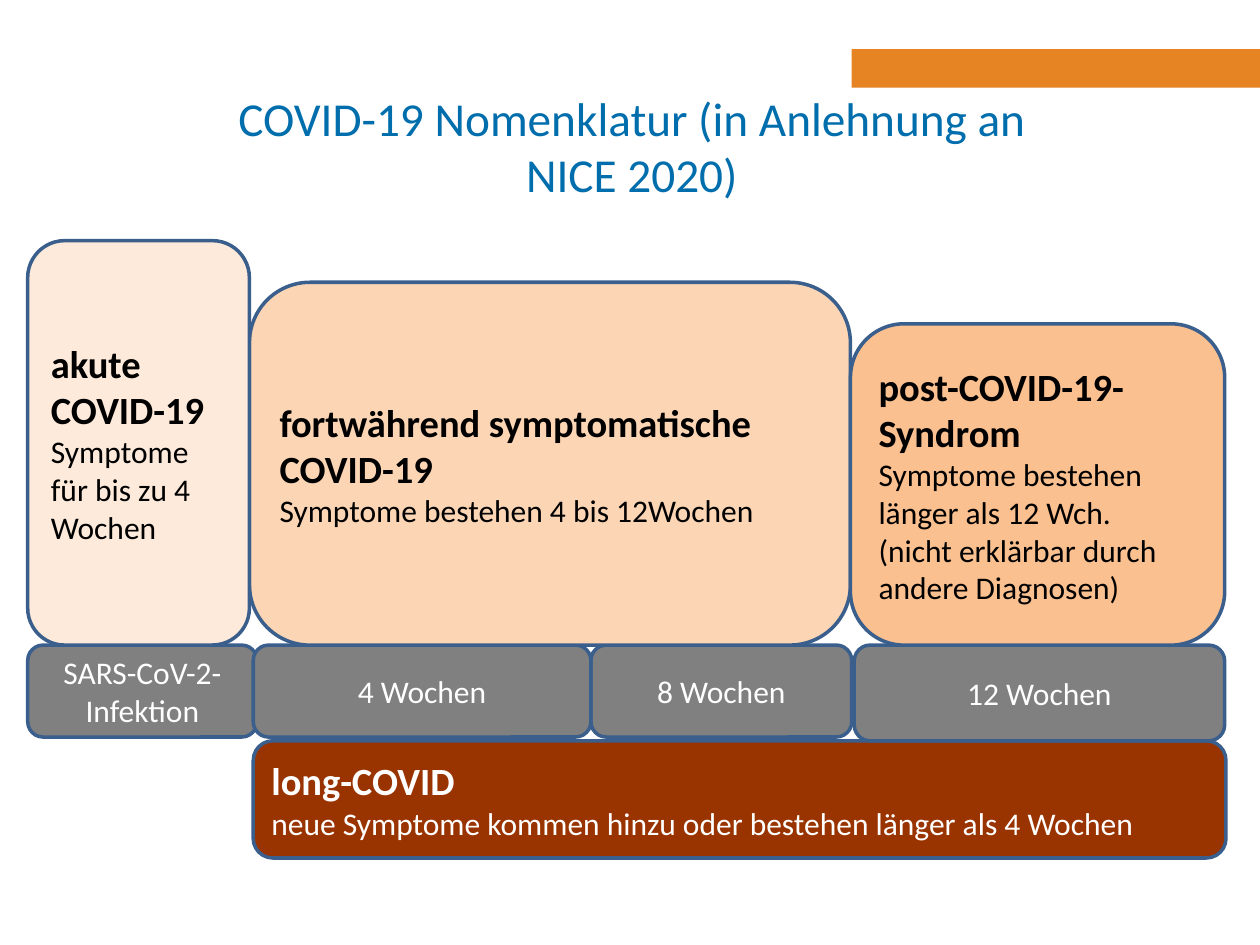
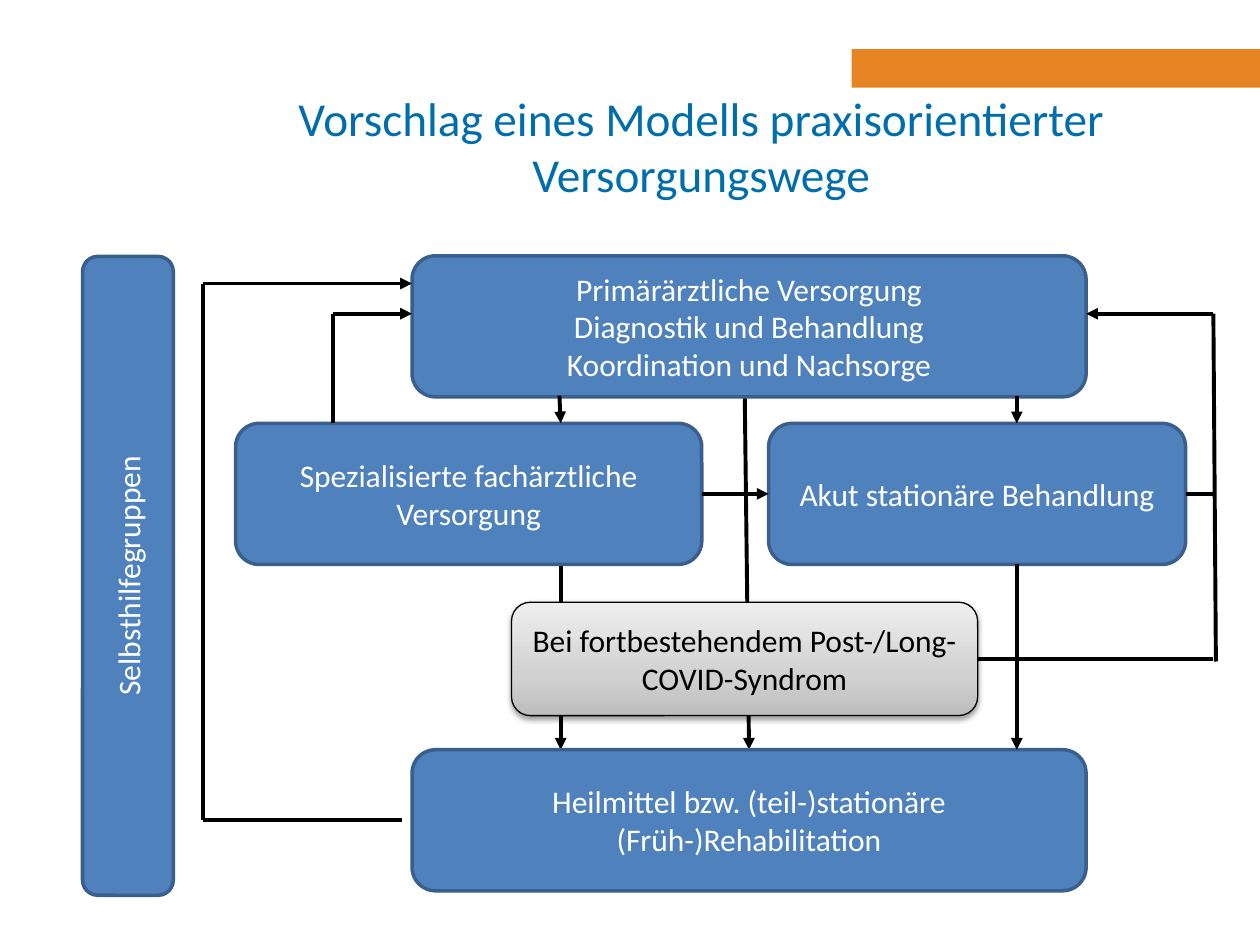
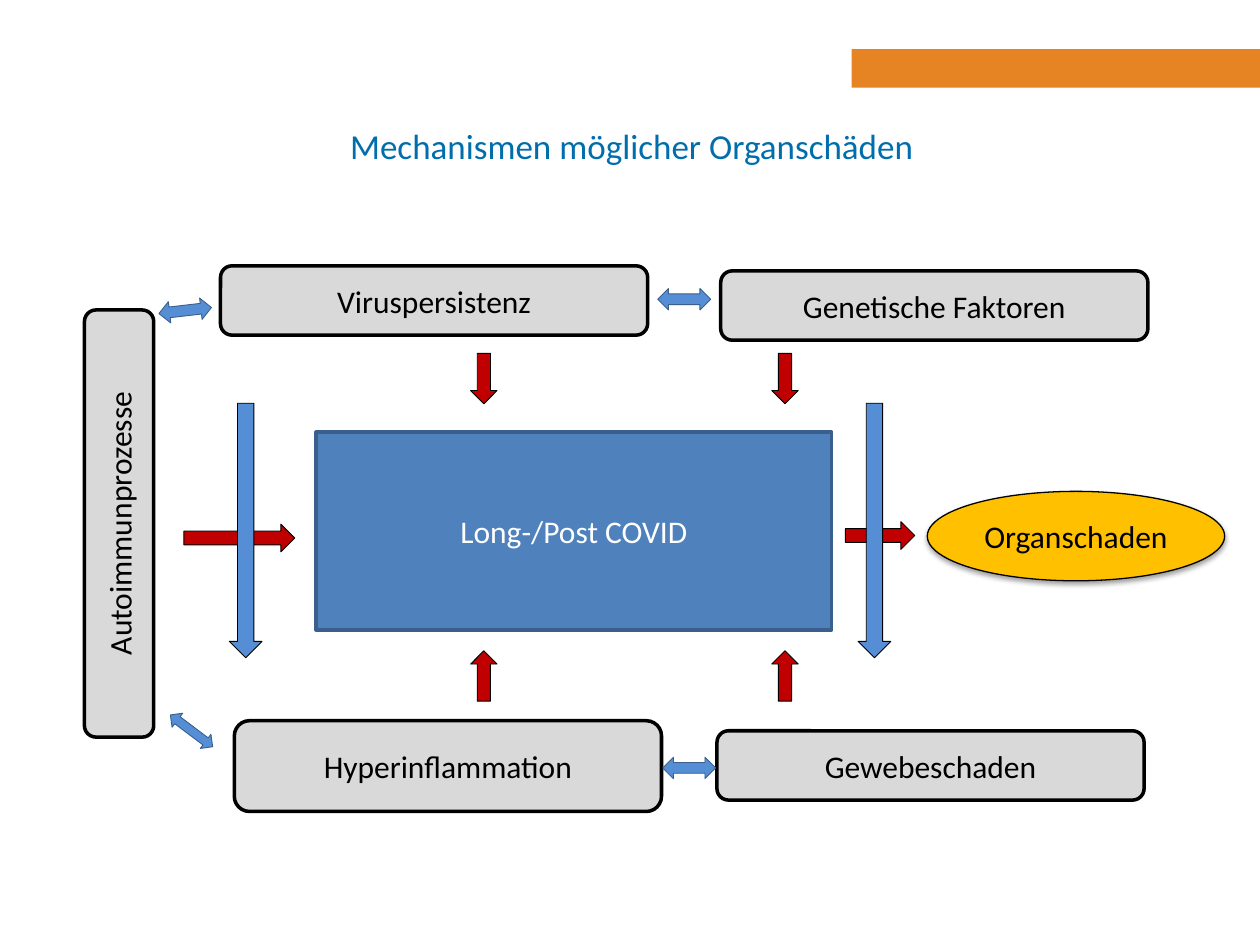
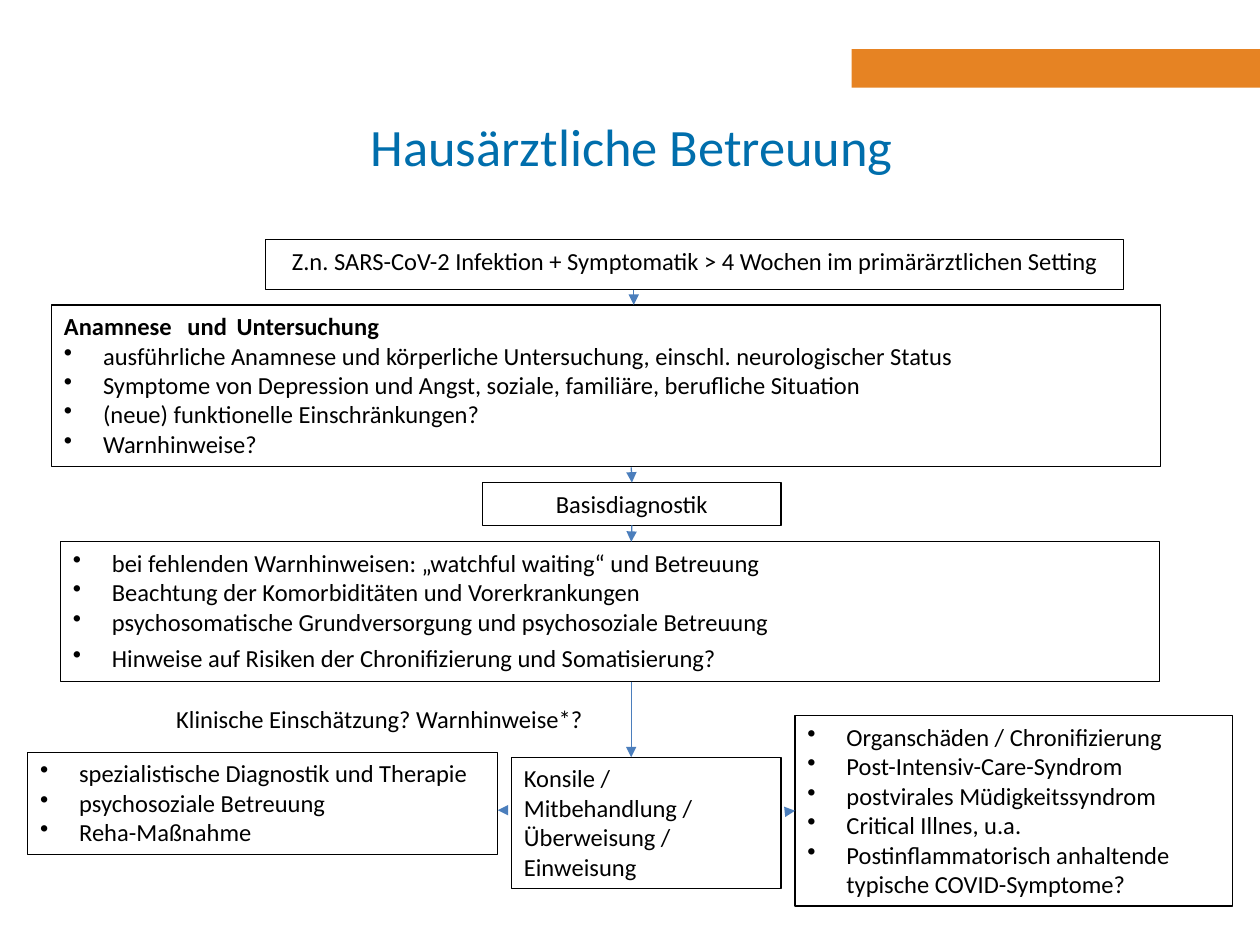
from dataclasses import dataclass, replace
from itertools import product
from typing import NamedTuple

from lxml import etree
from pptx import Presentation
from pptx.dml.color import RGBColor
from pptx.enum.shapes import MSO_CONNECTOR, MSO_SHAPE
from pptx.enum.text import MSO_ANCHOR, PP_ALIGN
from pptx.oxml.ns import qn
from pptx.util import Emu, Inches, Pt

LEFT, CENTER = PP_ALIGN.LEFT, PP_ALIGN.CENTER
TOP, MIDDLE = MSO_ANCHOR.TOP, MSO_ANCHOR.MIDDLE
RECTANGLE, ROUNDED, OVAL = MSO_SHAPE.RECTANGLE, MSO_SHAPE.ROUNDED_RECTANGLE, MSO_SHAPE.OVAL
ARROW, DOUBLE_ARROW = MSO_SHAPE.RIGHT_ARROW, MSO_SHAPE.LEFT_RIGHT_ARROW
STRAIGHT = MSO_CONNECTOR.STRAIGHT

SLIDE_WIDTH, SLIDE_HEIGHT = Inches(10), Inches(7.5)
COLUMNS = 100
CELL = SLIDE_WIDTH / COLUMNS
JOIN_TOLERANCE = CELL * 0.2

FONT = "Calibri"
ORANGE, TITLE_BLUE = "E68323", "006EAC"
BLUE, LIGHT_BLUE, EDGE, FLOW = "4F81BD", "558ED5", "3A5F8C", "4B7EBC"
BLACK, WHITE, RED = "000000", "FFFFFF", "C00000"
SILVER = ((0, "BDBDBD"), (35, "D1D1D1"), (100, "EEEEEE"))


class Frame(NamedTuple):
    column: float
    row: float
    width: float
    height: float


class Para(NamedTuple):
    text: str
    size: float | None = None
    bold: bool = False
    bullet: bool = False
    before: float = 0
    tabs: tuple[float, ...] = ()


@dataclass(frozen=True)
class Style:
    fill: str | tuple | None = None
    line: str | None = EDGE
    weight: float = 2
    ink: str = WHITE
    size: float = 18
    align: PP_ALIGN = CENTER
    anchor: MSO_ANCHOR = MIDDLE
    preset: MSO_SHAPE = ROUNDED
    shadow: bool = False


class Box(NamedTuple):
    frame: Frame
    paras: tuple[Para, ...]
    style: Style
    turn: float = 0


class Line(NamedTuple):
    start: tuple[float, float]
    end: tuple[float, float]
    arrow: bool = True


BAR = Style(ORANGE, None, preset=RECTANGLE)
TITLE = Style(None, None, ink=TITLE_BLUE, preset=RECTANGLE)
CARE = Style(BLUE)
PERIOD = Style("808080")
PHASE = Style("FCD5B5", ink=BLACK, align=LEFT)
LONG_TERM = Style("993300", align=LEFT)
RAISED = Style(SILVER, BLACK, 0.75, BLACK, shadow=True)
FACTOR = Style("D9D9D9", BLACK, ink=BLACK)
RED_ARROW = Style(RED, BLACK, 0.5, preset=ARROW)
BLUE_ARROW = replace(RED_ARROW, fill=LIGHT_BLUE)
EXCHANGE = Style(LIGHT_BLUE, EDGE, 0.5, preset=DOUBLE_ARROW)
STEP = Style(None, BLACK, 0.75, BLACK, 14, LEFT, TOP, RECTANGLE)
CENTERED_STEP = replace(STEP, align=CENTER)
NOTE = replace(STEP, line=None)


def grid(cells: float) -> Emu:
    return Emu(round(cells * CELL))


def color(value: str) -> RGBColor:
    return RGBColor.from_string(value)


def apply(target, values: dict) -> None:
    for name, value in values.items():
        setattr(target, name, value)


def child(parent, tag: str, **attributes):
    values = {name: str(value) for name, value in attributes.items()}
    return etree.SubElement(parent, qn(tag), values)


def texts(*lines: str) -> tuple[Para, ...]:
    return tuple(Para(line) for line in lines)


def bullets(*lines: str) -> tuple[Para, ...]:
    return tuple(Para(line, bullet=True) for line in lines)


def headed(headings: tuple[str, ...], *lines: str) -> tuple[Para, ...]:
    return tuple(Para(heading, 22, True) for heading in headings) + texts(*lines)


def fill_shape(shape, fill: str | tuple | None) -> None:
    if fill is None:
        shape.fill.background()
    elif isinstance(fill, str):
        shape.fill.solid()
        shape.fill.fore_color.rgb = color(fill)
    else:
        shape.fill.gradient()
        shape.fill.gradient_angle = 90
        stops = next(shape._element.spPr.iter(qn("a:gsLst")))
        for stop in list(stops):
            stops.remove(stop)
        for share, shade in fill:
            child(child(stops, "a:gs", pos=share * 1000), "a:srgbClr", val=shade)


def draw_line_format(line, shade: str, weight: float) -> None:
    line.color.rgb = color(shade)
    line.width = Pt(weight)


def add_shadow(shape) -> None:
    effects = shape._element.spPr.find(qn("a:effectLst"))
    outer = child(effects, "a:outerShdw", blurRad=Pt(3.1), dist=Pt(1.6), dir=90 * 60000, rotWithShape=0)
    child(child(outer, "a:srgbClr", val=BLACK), "a:alpha", val=38000)


def write_para(para_object, para: Para, style: Style) -> None:
    para_object.alignment = style.align
    if para.before:
        para_object.space_before = Pt(para.before)
    properties = para_object._p.get_or_add_pPr()
    if para.bullet:
        properties.set("marL", str(grid(3.1)))
        properties.set("indent", str(grid(-3.1)))
        child(properties, "a:buChar", char="•")
    if para.tabs:
        tab_list = child(properties, "a:tabLst")
        for stop in para.tabs:
            child(tab_list, "a:tab", pos=grid(stop), algn="l")
    span = para_object.add_run()
    span.text = para.text
    apply(span.font, {"name": FONT, "size": Pt(para.size or style.size), "bold": para.bold})
    span.font.color.rgb = color(style.ink)


def draw_box(page, box: Box):
    style = box.style
    shape = page.shapes.add_shape(style.preset, *map(grid, box.frame))
    shape.rotation = box.turn
    fill_shape(shape, style.fill)
    if style.line:
        draw_line_format(shape.line, style.line, style.weight)
    else:
        shape.line.fill.background()
    shape.shadow.inherit = False
    if style.shadow:
        add_shadow(shape)
    frame = shape.text_frame
    apply(frame, {"word_wrap": True, "vertical_anchor": style.anchor})
    for index, para in enumerate(box.paras):
        write_para(frame.add_paragraph() if index else frame.paragraphs[0], para, style)
    return shape


def draw_boxes(page, boxes: list[Box]) -> list:
    return [draw_box(page, box) for box in boxes]


def draw_lines(page, lines: list[Line], shade: str, weight: float) -> list:
    connectors = []
    for line in lines:
        connector = page.shapes.add_connector(STRAIGHT, *map(grid, line.start + line.end))
        draw_line_format(connector.line, shade, weight)
        if line.arrow:
            child(connector.line._get_or_add_ln(), "a:tailEnd", type="triangle")
        child(connector._element.spPr, "a:effectLst")
        connectors.append(connector)
    return connectors


def side_middles(shape) -> list[tuple[float, float]]:
    middle, center = shape.left + shape.width / 2, shape.top + shape.height / 2
    right, bottom = shape.left + shape.width, shape.top + shape.height
    return [(middle, shape.top), (shape.left, center), (middle, bottom), (right, center)]


def join_lines(connectors: list, shapes: list) -> None:
    upright = [shape for shape in shapes if not shape.rotation]
    for connector, shape in product(connectors, upright):
        for side, (x, y) in enumerate(side_middles(shape)):
            ends = (
                (connector.begin_x, connector.begin_y, connector.begin_connect),
                (connector.end_x, connector.end_y, connector.end_connect),
            )
            for end_x, end_y, connect in ends:
                if max(abs(end_x - x), abs(end_y - y)) <= JOIN_TOLERANCE:
                    connect(shape, side)


def add_page(deck, title: str, size: float, title_width: float = 70.7):
    page = deck.slides.add_slide(deck.slide_layouts[6])
    draw_box(page, Box(Frame(67.6, 3.9, 32.4, 3.05), (), BAR))
    draw_box(page, Box(Frame(14.8, 6.9, title_width, 9.3), texts(title), replace(TITLE, size=size)))
    return page


def add_nomenclature(deck) -> None:
    page = add_page(deck, "COVID-19 Nomenklatur (in Anlehnung an NICE 2020)", 27)
    base = 51.2
    long_covid = headed(("long-COVID",), "neue Symptome kommen hinzu oder bestehen länger als 4 Wochen")
    periods = (
        (2.2, 18.2, 7.3, "SARS-CoV-2-Infektion"),
        (46.9, 20.7, 7.3, "8 Wochen"),
        (67.8, 29.4, 7.6, "12 Wochen"),
        (20.1, 26.8, 7.3, "4 Wochen"),
    )
    phases = (
        (19.8, 22.4, 47.7, "FCD5B5",
         headed(("fortwährend symptomatische COVID-19",), "Symptome bestehen 4 bis 12Wochen")),
        (2.2, 19.1, 17.6, "FDEADA", headed(("akute", "COVID-19"), "Symptome für bis zu 4 Wochen")),
        (67.5, 25.7, 29.7, "FAC090",
         headed(("post-COVID-19-Syndrom",), "Symptome bestehen länger als 12 Wch.",
                "(nicht erklärbar durch andere Diagnosen)")),
    )
    boxes = [Box(Frame(20.1, 58.8, 77.2, 9.3), long_covid, LONG_TERM)]
    boxes += [Box(Frame(column, base, width, height), texts(label), PERIOD)
              for column, width, height, label in periods]
    boxes += [Box(Frame(column, row, width, base - row), paras, replace(PHASE, fill=fill))
              for column, row, width, fill, paras in phases]
    draw_boxes(page, boxes)


def add_care_paths(deck) -> None:
    page = add_page(deck, "Vorschlag eines Modells praxisorientierter Versorgungswege", 27, 81.7)
    height = 11.2
    primary, special, rehab = 20.3, 33.6, 59.5
    special_end = special + height
    special_middle = special + height / 2
    behind = draw_lines(page, [
        Line((44.5, special_end), (44.5, rehab)),
        Line((59.1, 30.7), (59.4, rehab)),
    ], BLACK, 2.25)
    shapes = draw_boxes(page, [
        Box(Frame(32.7, primary, 53.5, height),
            texts("Primärärztliche Versorgung", "Diagnostik und Behandlung", "Koordination und Nachsorge"), CARE),
        Box(Frame(18.7, special, 37, height), texts("Spezialisierte fachärztliche Versorgung"), CARE),
        Box(Frame(61, special, 33.1, height), texts("Akut stationäre Behandlung"), CARE),
        Box(Frame(40.6, 47.8, 37, 9), texts("Bei fortbestehendem Post-/Long-COVID-Syndrom"), RAISED),
        Box(Frame(32.7, rehab, 53.5, height),
            texts("Heilmittel bzw. (teil-)stationäre", "(Früh-)Rehabilitation"), CARE),
        Box(Frame(-15.2, 42.1, 50.7, 7.2), texts("Selbsthilfegruppen"), CARE, 270),
    ])
    front = draw_lines(page, [
        Line((80.7, special_end), (80.7, rehab)),
        Line((44.4, 31.4), (44.5, special)),
        Line((80.7, 31.4), (80.7, special)),
        Line((26.4, special), (26.4, 24.9), False),
        Line((26.4, 24.9), (32.7, 24.9)),
        Line((96.5, 52.5), (96.3, 24.9), False),
        Line((96.3, 24.9), (86.2, 24.9)),
        Line((16.1, 65.1), (16.1, 22.5), False),
        Line((16.1, 22.5), (32.7, 22.5)),
        Line((31.9, 65.1), (16.1, 65.1), False),
        Line((96.3, 52.3), (77.6, 52.3), False),
        Line((96.5, special_middle), (94.1, special_middle), False),
        Line((55.7, special_middle), (61, special_middle)),
    ], BLACK, 2.25)
    join_lines(behind + front, shapes)


def add_mechanisms(deck) -> None:
    page = add_page(deck, "Mechanismen möglicher Organschäden", 20)
    factors = (
        (17.5, 21.1, 5.5, "Viruspersistenz", 0),
        (-7.5, 38.8, 5.5, "Autoimmunprozesse", 270),
        (57.2, 21.5, 5.5, "Genetische Faktoren", 0),
        (56.9, 58, 5.5, "Gewebeschaden", 0),
        (18.6, 57.2, 7.2, "Hyperinflammation", 0),
    )
    damage = replace(RAISED, fill="FFC000", preset=OVAL)
    boxes = [Box(Frame(73.6, 39, 23.6, 7.1), texts("Organschaden"), damage)]
    boxes += [Box(Frame(column, row, 33.9, height), texts(label), FACTOR, turn)
              for column, row, height, label, turn in factors]
    boxes.append(Box(Frame(25.1, 34.3, 40.9, 15.7), texts("Long-/Post COVID"),
                     replace(CARE, preset=RECTANGLE)))
    boxes += [Box(Frame(column, row, 4, 2.1), (), RED_ARROW, turn)
              for column, (row, turn) in product((36.4, 60.3), ((29, 90), (52.6, 270)))]
    boxes += [Box(Frame(*frame, 2.2), (), RED_ARROW) for frame in ((67.1, 41.4, 5.5), (14.6, 41.6, 8.8))]
    boxes += [Box(Frame(column, 40.8, 20.2, 2.6), (), BLUE_ARROW, 90) for column in (59.3, 9.4)]
    exchanges = ((52.2, 22.9, 1.7, 0), (12.6, 23.8, 1.7, 353.4), (52.6, 60.1, 1.7, 0), (13.1, 57.3, 1.4, 36.9))
    boxes += [Box(Frame(column, row, 4.2, height), (), EXCHANGE, turn)
              for column, row, height, turn in exchanges]
    draw_boxes(page, boxes)


def add_family_practice(deck) -> None:
    page = add_page(deck, "Hausärztliche Betreuung", 30)
    examination = (Para("Anamnese\tund\tUntersuchung", bold=True, tabs=(9.8, 13.7)),) + bullets(
        "ausführliche Anamnese und körperliche Untersuchung, einschl. neurologischer Status",
        "Symptome von Depression und Angst, soziale, familiäre, berufliche Situation",
        "(neue) funktionelle Einschränkungen?",
        "Warnhinweise?",
    )
    support = bullets(
        "bei fehlenden Warnhinweisen: „watchful waiting“ und Betreuung",
        "Beachtung der Komorbiditäten und Vorerkrankungen",
        "psychosomatische Grundversorgung und psychosoziale Betreuung",
    ) + (Para("Hinweise auf Risiken der Chronifizierung und Somatisierung?", bullet=True, before=4),)
    therapy = bullets("spezialistische Diagnostik und Therapie", "psychosoziale Betreuung", "Reha-Maßnahme")
    sequelae = bullets(
        "Organschäden / Chronifizierung",
        "Post-Intensiv-Care-Syndrom",
        "postvirales Müdigkeitssyndrom",
        "Critical Illnes, u.a.",
        "Postinflammatorisch anhaltende typische COVID-Symptome?",
    )
    shapes = draw_boxes(page, [
        Box(Frame(21.1, 19, 68.1, 4),
            texts("Z.n. SARS-CoV-2 Infektion + Symptomatik > 4 Wochen im primärärztlichen Setting"), CENTERED_STEP),
        Box(Frame(2.2, 59.7, 37.3, 8.1), therapy, STEP),
        Box(Frame(4.1, 24.2, 88, 12.8), examination, STEP),
        Box(Frame(38.3, 38.3, 23.7, 3.4), texts("Basisdiagnostik"), CENTERED_STEP),
        Box(Frame(4.8, 43, 87.2, 11.1), support, STEP),
        Box(Frame(40.6, 60.1, 21.4, 10.4), texts("Konsile / Mitbehandlung / Überweisung / Einweisung"), STEP),
        Box(Frame(63.1, 56.8, 34.7, 15.1), sequelae, STEP),
        Box(Frame(13, 55.4, 40.5, 3.4), texts("Klinische Einschätzung? Warnhinweise*?"), NOTE),
    ])
    axis = 50.1
    flow = [Line((50.3, 23), (50.3, 24.2))]
    flow += [Line((axis, start), (axis, end)) for start, end in ((37.1, 38.3), (41.7, 43), (54.1, 60.1))]
    flow += [Line((62.6, 64.4), (63.1, 64.4)), Line((40.3, 64.3), (39.5, 64.3))]
    join_lines(draw_lines(page, flow, FLOW, 0.75), shapes)


def main() -> None:
    deck = Presentation()
    apply(deck, {"slide_width": SLIDE_WIDTH, "slide_height": SLIDE_HEIGHT})
    for add_content in (add_nomenclature, add_care_paths, add_mechanisms, add_family_practice):
        add_content(deck)
    deck.save("out.pptx")


if __name__ == "__main__":
    main()
